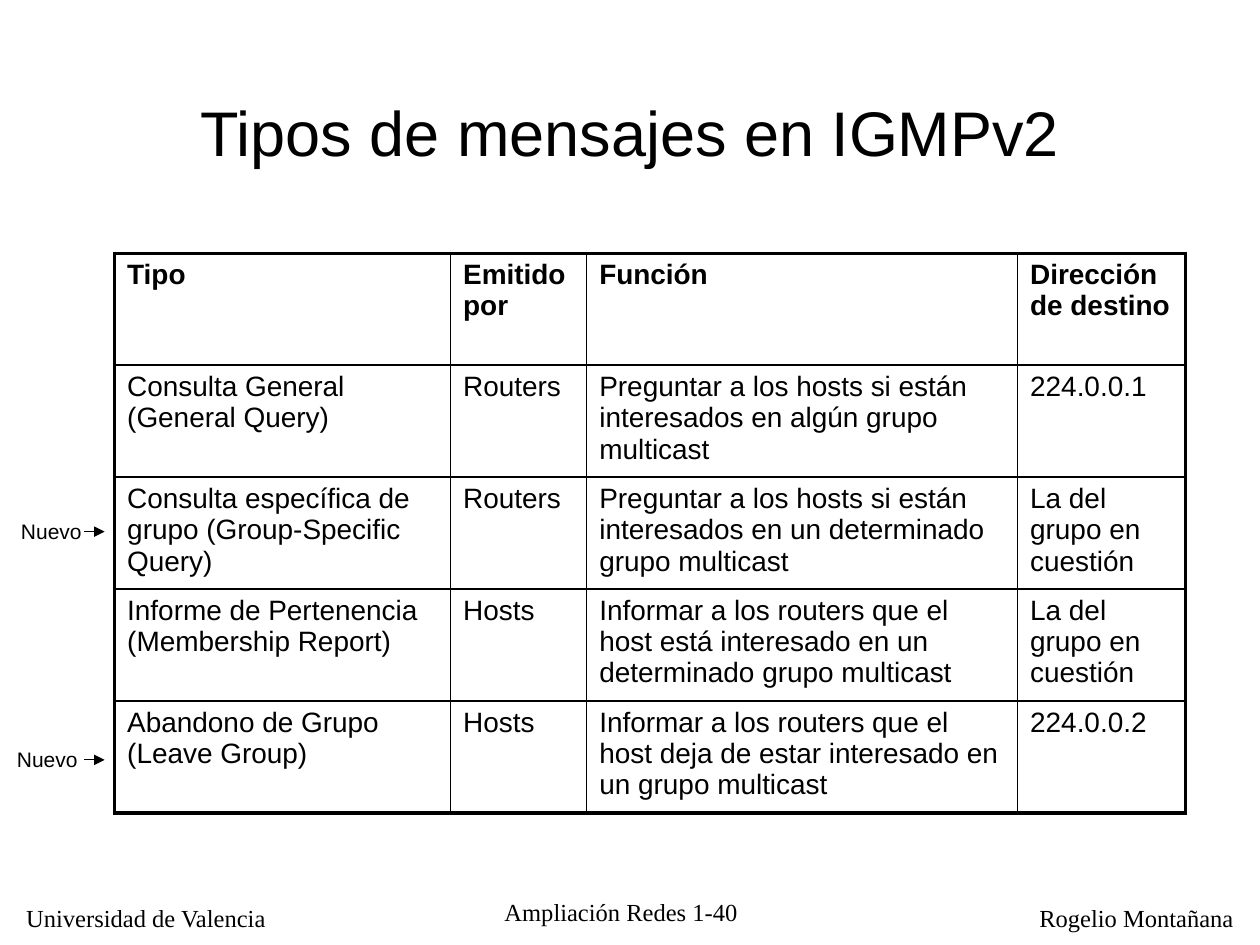
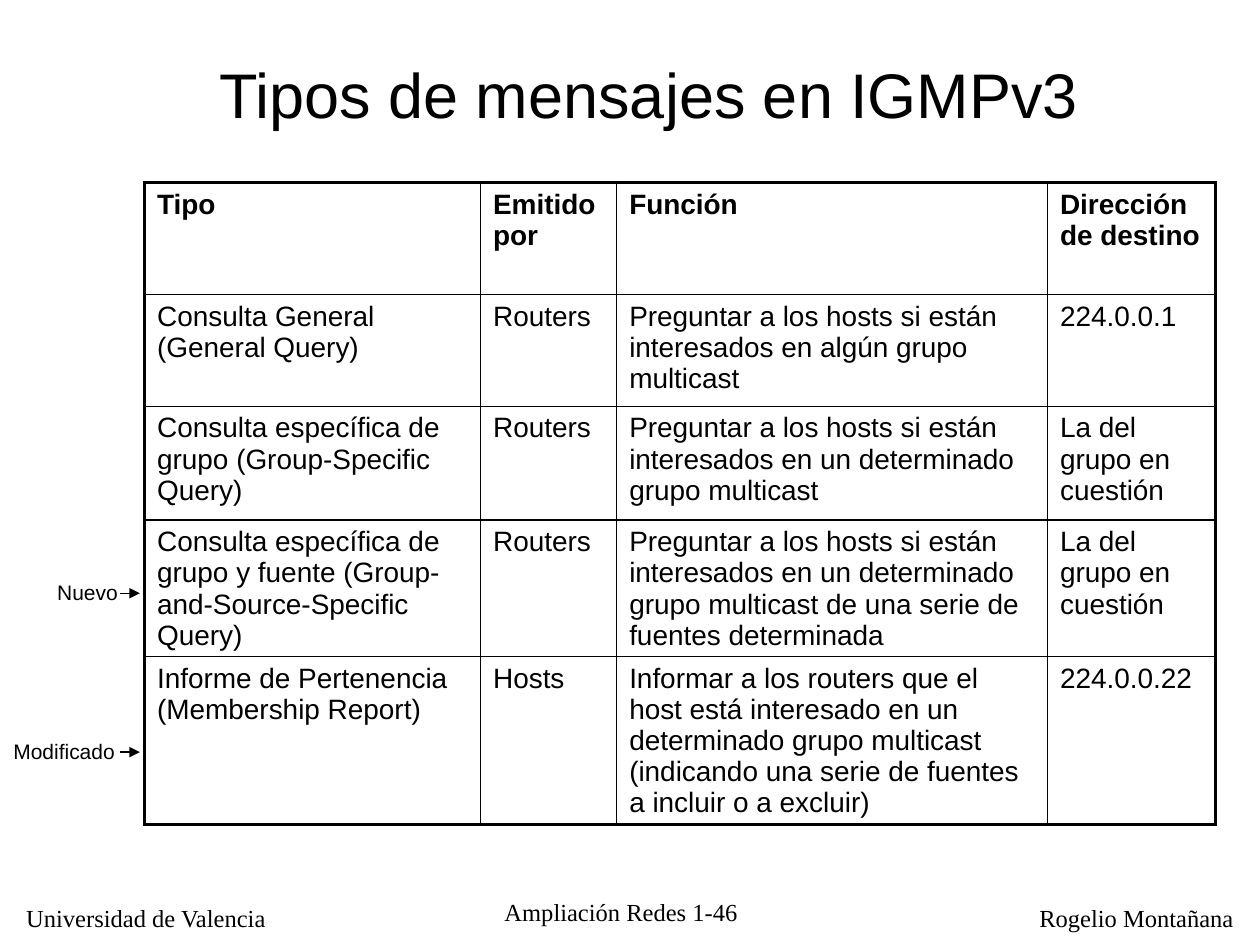
from dataclasses import dataclass

from lxml import etree
from pptx import Presentation
from pptx.dml.color import RGBColor
from pptx.enum.shapes import MSO_CONNECTOR
from pptx.enum.text import MSO_ANCHOR, PP_ALIGN
from pptx.oxml.ns import qn
from pptx.util import Pt

LEFT, CENTER = PP_ALIGN.LEFT, PP_ALIGN.CENTER
TOP, MIDDLE = MSO_ANCHOR.TOP, MSO_ANCHOR.MIDDLE
STRAIGHT = MSO_CONNECTOR.STRAIGHT

# Shared style
INK, PAPER = "000000", "FFFFFF"
SANS, SERIF = "Arial", "Times New Roman"
THIN, THICK = 1, 2.25
PITCH = 17.8
COLS = (192, 77.8, 246.2, 96)
HEAD = ("Tipo", "Emitido por", "Función", "Dirección de destino")
GROUP = "La del grupo en cuestión"


@dataclass(frozen=True)
class Box:
    x: float
    y: float
    w: float
    h: float


@dataclass(frozen=True)
class Label:
    text: str
    box: Box
    size: float
    font: str = SANS
    align: PP_ALIGN = LEFT
    anchor: MSO_ANCHOR = TOP
    wrap: bool = False


@dataclass(frozen=True)
class Mark:
    """Side note with an arrow towards its table row."""
    text: str
    x: float
    w: float
    y: float


@dataclass(frozen=True)
class Page:
    title: str
    frame: Box
    number: str
    x: float
    y: float
    heights: tuple[float, ...]
    rows: tuple[tuple[str, ...], ...]
    tip: tuple[float, float]
    marks: tuple[Mark, ...]


FOOTERS = (
    Label("Universidad de Valencia", Box(7.9, 512.6, 153.4, 24), 14, SERIF),
    Label("Rogelio Montañana", Box(586.8, 512.6, 125.3, 24), 14, SERIF),
)

GENERAL = ("Consulta General (General Query)", "Routers",
           "Preguntar a los hosts si están interesados en algún grupo multicast",
           "224.0.0.1")
ASK = "Preguntar a los hosts si están interesados en un determinado grupo multicast"
SPECIFIC = ("Consulta específica de grupo (Group-Specific Query)", "Routers",
            ASK, GROUP)
REPORT = "Informe de Pertenencia (Membership Report)"
JOIN = ("Informar a los routers que el host está interesado en un determinado "
        "grupo multicast")

PAGES = (
    Page(
        "Tipos de mensajes en IGMPv2", Box(54, 30, 612, 90), "1-40",
        65.5, 144.7, (64,) * 5,
        (
            HEAD, GENERAL, SPECIFIC,
            (REPORT, "Hosts", JOIN, GROUP),
            ("Abandono de Grupo (Leave Group)", "Hosts",
             "Informar a los routers que el host deja de estar interesado en "
             "un grupo multicast", "224.0.0.2"),
        ),
        (48.2, 59.8),
        (Mark("Nuevo", 4.9, 49, 303.8), Mark("Nuevo", 2.6, 49, 434.2)),
    ),
    Page(
        "Tipos de mensajes en IGMPv3", Box(64.8, 26.3, 612, 54), "1-46",
        82.6, 104.3, (64, 64, 65, 78, 96),
        (
            HEAD, GENERAL, SPECIFIC,
            ("Consulta específica de grupo y fuente "
             "(Group-and-Source-Specific Query)", "Routers",
             ASK + " de una serie de fuentes determinada", GROUP),
            (REPORT, "Hosts",
             JOIN + " (indicando una serie de fuentes a incluir o a excluir)",
             "224.0.0.22"),
        ),
        (68.7, 79.9),
        (Mark("Nuevo", 25.6, 49, 339), Mark("Modificado", 0.6, 78, 429.8)),
    ),
)


def rgb(code: str) -> RGBColor:
    return RGBColor.from_string(code)


def write(para, text: str, size: float, font: str, bold: bool = False) -> None:
    run = para.add_run()
    run.text = text
    run.font.size = Pt(size)
    run.font.name = font
    run.font.bold = bold
    run.font.color.rgb = rgb(INK)


def draw_label(slide, label: Label) -> None:
    box = label.box
    shape = slide.shapes.add_textbox(Pt(box.x), Pt(box.y), Pt(box.w), Pt(box.h))
    frame = shape.text_frame
    frame.word_wrap = label.wrap
    frame.vertical_anchor = label.anchor
    para = frame.paragraphs[0]
    para.alignment = label.align
    write(para, label.text, label.size, label.font)


def draw_arrow(slide, start: float, end: float, y: float) -> None:
    line = slide.shapes.add_connector(STRAIGHT, Pt(start), Pt(y), Pt(end), Pt(y))
    line.line.width = Pt(0.75)
    line.line.color.rgb = rgb(INK)
    etree.SubElement(line.line._get_or_add_ln(), qn("a:tailEnd"), type="triangle")
    etree.SubElement(line._element.spPr, qn("a:effectLst"))


def set_edges(cell, widths: dict[str, float]) -> None:
    props = cell._tc.get_or_add_tcPr()
    for i, (side, width) in enumerate(widths.items()):
        edge = etree.Element(qn(f"a:ln{side}"), w=str(Pt(width)))
        fill = etree.SubElement(edge, qn("a:solidFill"))
        etree.SubElement(fill, qn("a:srgbClr"), val=INK)
        props.insert(i, edge)


def draw_table(slide, page: Page) -> None:
    rows, cols = len(page.rows), len(COLS)
    table = slide.shapes.add_table(rows, cols, Pt(page.x), Pt(page.y),
                                   Pt(sum(COLS)), Pt(sum(page.heights))).table
    table.first_row = table.horz_banding = False
    for col, width in zip(table.columns, COLS):
        col.width = Pt(width)
    for r, texts in enumerate(page.rows):
        table.rows[r].height = Pt(page.heights[r])
        for c, text in enumerate(texts):
            cell = table.cell(r, c)
            cell.fill.background()
            # Fixed pitch and no bottom margin keep the row heights
            cell.margin_bottom = Pt(0)
            para = cell.text_frame.paragraphs[0]
            para.line_spacing = Pt(PITCH)
            write(para, text, 16, SANS, bold=r == 0)
            # Outer edges are thick, inner ones thin
            outer = {"L": c == 0, "R": c == cols - 1,
                     "T": r == 0, "B": r == rows - 1}
            set_edges(cell, {side: THICK if out else THIN
                             for side, out in outer.items()})


def draw_page(deck, page: Page) -> None:
    slide = deck.slides.add_slide(deck.slide_layouts[6])
    slide.background.fill.solid()
    slide.background.fill.fore_color.rgb = rgb(PAPER)

    # Footers and title
    for label in FOOTERS:
        draw_label(slide, label)
    draw_label(slide, Label(f"Ampliación Redes {page.number}",
                            Box(270.7, 509.3, 168.5, 21.6), 14, SERIF, CENTER,
                            wrap=True))
    draw_label(slide, Label(page.title, page.frame, 36, SANS, CENTER, MIDDLE, True))

    # Table with side notes
    draw_table(slide, page)
    for mark in page.marks:
        draw_label(slide, Label(mark.text, Box(mark.x, mark.y - 11.2, mark.w, 21.6), 12))
        draw_arrow(slide, *page.tip, mark.y)


def main() -> None:
    deck = Presentation()
    deck.slide_width, deck.slide_height = Pt(720), Pt(540)
    for page in PAGES:
        draw_page(deck, page)
    deck.save("out.pptx")


if __name__ == "__main__":
    main()
